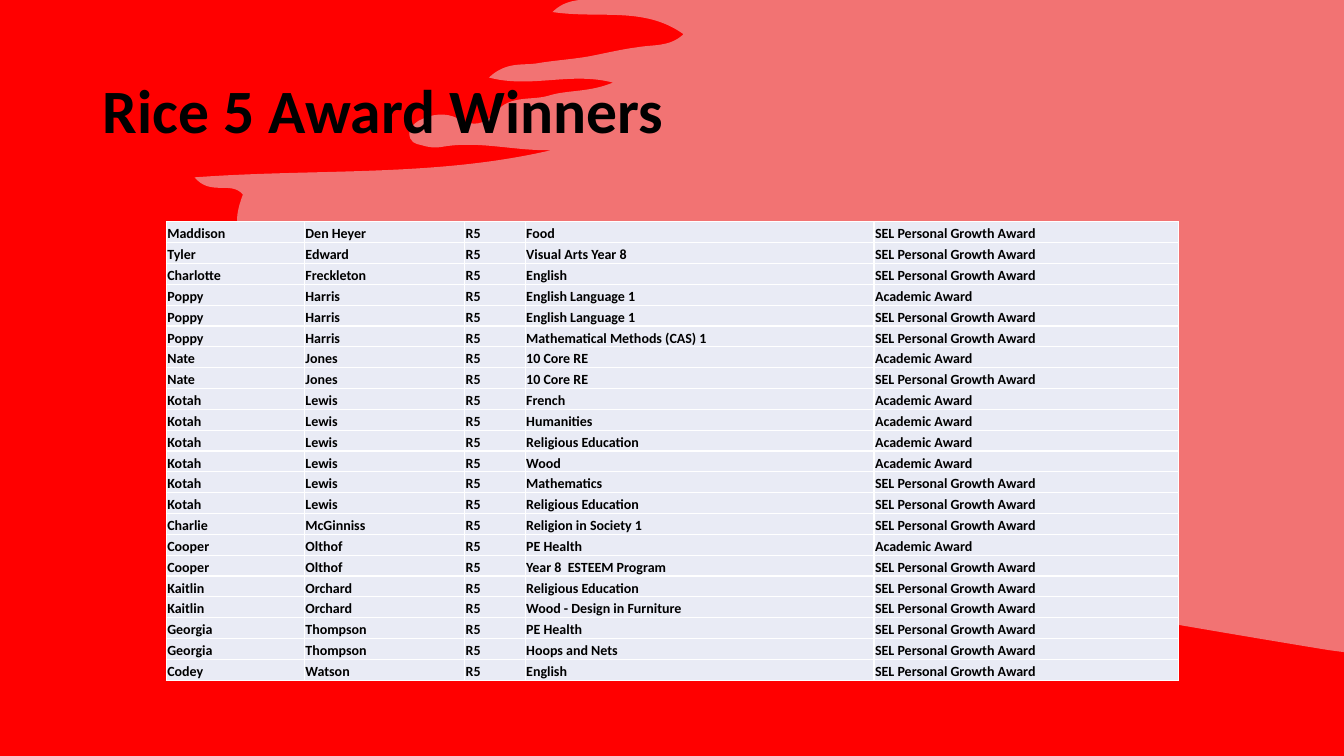
import lxml.etree
import pptx
import pptx.dml.color
import pptx.enum.text
import pptx.oxml.ns
import pptx.util

FONT = "Calibri"
RED, WASH, BLACK, WHITE, CELL = "FF0000", "E7E6E6", "000000", "FFFFFF", "E9EBF5"
HOUSE = "R5"
GROWTH = "SEL Personal Growth Award"
ACADEMIC = "Academic Award"
COLUMN_WIDTHS = [1.37, 1.59, 0.6, 3.46, 3.02]
TABLE_LEFT, TABLE_TOP, TABLE_HEIGHT = 1.65, 2.2, 4.55

# First name, last name, and the (subject, award) pairs won
WINNERS = [
    ("Maddison", "Den Heyer", [("Food", GROWTH)]),
    ("Tyler", "Edward", [("Visual Arts Year 8", GROWTH)]),
    ("Charlotte", "Freckleton", [("English", GROWTH)]),
    ("Poppy", "Harris", [("English Language 1", ACADEMIC), ("English Language 1", GROWTH),
                         ("Mathematical Methods (CAS) 1", GROWTH)]),
    ("Nate", "Jones", [("10 Core RE", ACADEMIC), ("10 Core RE", GROWTH)]),
    ("Kotah", "Lewis", [("French", ACADEMIC), ("Humanities", ACADEMIC),
                        ("Religious Education", ACADEMIC), ("Wood", ACADEMIC),
                        ("Mathematics", GROWTH), ("Religious Education", GROWTH)]),
    ("Charlie", "McGinniss", [("Religion in Society 1", GROWTH)]),
    ("Cooper", "Olthof", [("PE Health", ACADEMIC), ("Year 8  ESTEEM Program", GROWTH)]),
    ("Kaitlin", "Orchard", [("Religious Education", GROWTH),
                            ("Wood - Design in Furniture", GROWTH)]),
    ("Georgia", "Thompson", [("PE Health", GROWTH), ("Hoops and Nets", GROWTH)]),
    ("Codey", "Watson", [("English", GROWTH)]),
]

# Brush edge: each row is one Bezier curve (two control points, then its end), in inches
BRUSH_CORNER, BRUSH_START, BRUSH_END = (13.33, 0), (5.75, 0), (13.33, 6.47)
BRUSH_CURVES = [
    (5.67, 0.01, 5.57, 0.03, 5.48, 0.12),
    (5.95, 0.19, 6.39, 0.06, 6.78, 0.34),
    (6.64, 0.47, 6.48, 0.44, 6.32, 0.47),
    (6.16, 0.49, 6, 0.53, 5.84, 0.56),
    (5.67, 0.59, 5.49, 0.6, 5.32, 0.63),
    (5.18, 0.65, 5.02, 0.61, 4.85, 0.77),
    (5.27, 0.88, 5.66, 0.71, 6.08, 0.82),
    (5.84, 0.92, 5.63, 0.89, 5.44, 0.95),
    (5.27, 1, 5.06, 0.94, 4.92, 1.11),
    (4.81, 1.24, 4.69, 1.26, 4.55, 1.18),
    (4.42, 1.11, 4.28, 1.13, 4.15, 1.2),
    (4.11, 1.23, 4.06, 1.26, 4.06, 1.32),
    (4.06, 1.41, 4.12, 1.43, 4.18, 1.44),
    (4.24, 1.46, 4.31, 1.47, 4.37, 1.46),
    (4.74, 1.39, 5.1, 1.5, 5.47, 1.49),
    (4.31, 1.76, 3.14, 1.67, 1.93, 1.76),
    (2.09, 1.95, 2.29, 1.79, 2.41, 1.93),
    (2.3, 2.22, 2.34, 2.37, 2.58, 2.39),
    (2.8, 2.41, 3.04, 2.31, 3.16, 2.65),
    (3.2, 2.76, 3.41, 2.73, 3.55, 2.75),
    (3.84, 2.79, 4.14, 2.75, 4.42, 2.88),
    (4.53, 2.93, 4.6, 2.97, 4.55, 3.11),
    (4.49, 3.25, 4.56, 3.3, 4.66, 3.36),
    (4.73, 3.4, 4.83, 3.39, 4.89, 3.52),
    (4.28, 3.5, 3.69, 3.4, 3.09, 3.5),
    (3.75, 3.74, 4.47, 3.73, 5.12, 4.02),
    (5.1, 4.12, 4.95, 4.07, 4.94, 4.22),
    (5.28, 4.38, 5.69, 4.27, 6.05, 4.5),
    (5.84, 4.61, 5.65, 4.44, 5.45, 4.54),
    (5.52, 4.69, 8.4, 5.61, 8.92, 5.71),
    (9.78, 5.87, 11.95, 6.25, 13.18, 6.45),
]


def inches(*lengths):
    return [pptx.util.Inches(length) for length in lengths]


def set_fill(fill, color):
    fill.solid()
    fill.fore_color.rgb = pptx.dml.color.RGBColor.from_string(color)


def set_text(frame, text, size, color=BLACK, bold=True, line_spacing=None):
    paragraph = frame.paragraphs[0]
    paragraph.alignment = pptx.enum.text.PP_ALIGN.LEFT
    paragraph.line_spacing = line_spacing
    run = paragraph.add_run()
    run.text = text
    run.font.name = FONT
    run.font.size = pptx.util.Pt(size)
    run.font.bold = bold
    set_fill(run.font.fill, color)


def bend_edges(brush):
    """Turn the straight edges after the first one into the brush curves."""
    qn = pptx.oxml.ns.qn
    edges = list(brush._element.spPr.iter(qn("a:lnTo")))[1:]
    for edge, curve in zip(edges, BRUSH_CURVES):
        bend = lxml.etree.Element(qn("a:cubicBezTo"))
        lengths = inches(*curve)
        for x, y in zip(lengths[::2], lengths[1::2]):
            lxml.etree.SubElement(bend, qn("a:pt"), x=str(x - brush.left), y=str(y - brush.top))
        edge.getparent().replace(edge, bend)


def add_brush(slide):
    corners = [BRUSH_START, *(curve[-2:] for curve in BRUSH_CURVES), BRUSH_END]
    builder = slide.shapes.build_freeform(*inches(*BRUSH_CORNER))
    builder.add_line_segments([inches(*corner) for corner in corners], close=True)
    brush = builder.convert_to_shape()
    bend_edges(brush)
    brush.shadow.inherit = False
    brush.line.fill.background()
    set_fill(brush.fill, WASH)
    wash = brush._element.spPr.find(".//" + pptx.oxml.ns.qn("a:srgbClr"))
    lxml.etree.SubElement(wash, pptx.oxml.ns.qn("a:alpha"), val="50000")


def set_title(title, text):
    title.left, title.top, title.width, title.height = inches(0.92, 0.4, 11.5, 1.45)
    title.text_frame.vertical_anchor = pptx.enum.text.MSO_ANCHOR.MIDDLE
    set_text(title.text_frame, text, size=44, line_spacing=0.9)


def add_borders(cell, color, width):
    qn = pptx.oxml.ns.qn
    properties = cell._tc.get_or_add_tcPr()
    for side in ("a:lnL", "a:lnR", "a:lnT", "a:lnB"):
        border = lxml.etree.SubElement(properties, qn(side), w=str(pptx.util.Pt(width)))
        solid = lxml.etree.SubElement(border, qn("a:solidFill"))
        lxml.etree.SubElement(solid, qn("a:srgbClr"), val=color)


def format_cell(cell, text):
    cell.margin_left, cell.margin_top, cell.margin_right, cell.margin_bottom = inches(
        0.01, 0.01, 0.01, 0)
    cell.vertical_anchor = pptx.enum.text.MSO_ANCHOR.BOTTOM
    add_borders(cell, WHITE, width=1)
    set_fill(cell.fill, CELL)
    set_text(cell.text_frame, text, size=10)


def add_awards_table(slide):
    awards = [(first, last, HOUSE, subject, award)
              for first, last, prizes in WINNERS for subject, award in prizes]
    table = slide.shapes.add_table(
        len(awards), len(COLUMN_WIDTHS),
        *inches(TABLE_LEFT, TABLE_TOP, sum(COLUMN_WIDTHS), TABLE_HEIGHT)).table
    table.first_row = table.horz_banding = False
    for column, width in zip(table.columns, COLUMN_WIDTHS):
        column.width = pptx.util.Inches(width)
    for row, texts in zip(table.rows, awards):
        for cell, text in zip(row.cells, texts):
            format_cell(cell, text)


def main():
    deck = pptx.Presentation()
    deck.slide_width, deck.slide_height = inches(13.33, 7.5)
    slide = deck.slides.add_slide(deck.slide_layouts[5])
    set_fill(slide.background.fill, RED)
    add_brush(slide)
    title = slide.shapes.title
    set_title(title, "Rice 5 Award Winners")
    slide.shapes._spTree.append(title._element)  # in front of the brush
    add_awards_table(slide)
    deck.save("out.pptx")


if __name__ == "__main__":
    main()
